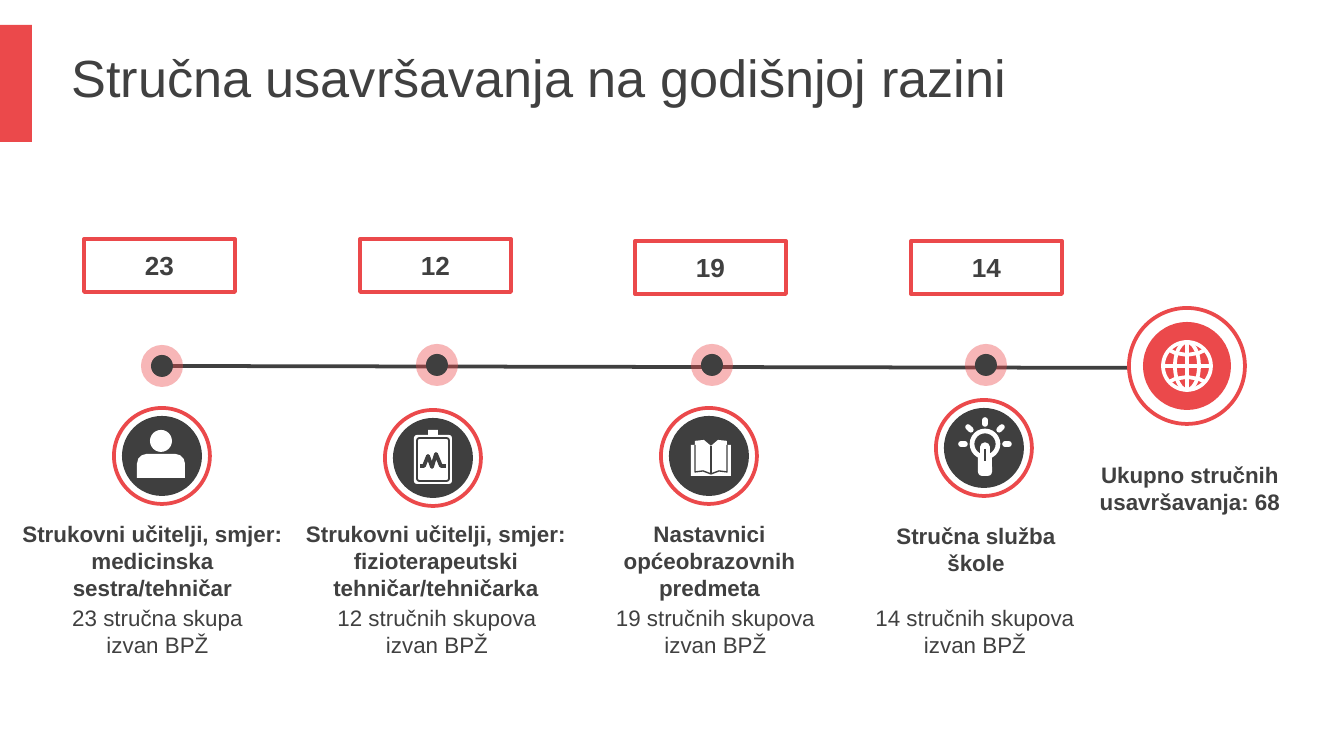
import math

from lxml import etree
from pptx import Presentation
from pptx.dml.color import RGBColor
from pptx.enum import shapes, text
from pptx.oxml.ns import qn
from pptx.util import Emu, Pt

PX = 914400 / 134.4
RED, DARK, INK, WHITE = "EB494B", "3F3F3F", "404040", "FFFFFF"
KIND = shapes.MSO_SHAPE

TITLE = "Stručna usavršavanja na godišnjoj razini"
TOTAL = "Ukupno stručnih usavršavanja: 68"
# count, heading, detail; left and top of the count; centres of dot and badge;
# left, top, width, height of heading; left and width of detail
STAGES = [
    ("23", "Strukovni učitelji, smjer: medicinska sestra/tehničar",
     "23 stručna skupa izvan BPŽ",
     (84, 239), (162, 366), (162, 456), (0, 513, 305, 95), (31, 253)),
    ("12", "Strukovni učitelji, smjer: fizioterapeutski tehničar/tehničarka",
     "12 stručnih skupova izvan BPŽ",
     (360, 239), (437, 365), (433, 458), (292, 513, 288, 95), (296, 282)),
    ("19", "Nastavnici općeobrazovnih predmeta",
     "19 stručnih skupova izvan BPŽ",
     (635, 241), (712, 365), (709, 456), (583, 513, 253, 95), (589, 253)),
    ("14", "Stručna služba škole",
     "14 stručnih skupova izvan BPŽ",
     (911, 241), (986, 365), (984, 448), (872, 516, 208, 67), (860, 230)),
]

deck = Presentation()
deck.slide_width, deck.slide_height = Emu(round(1344 * PX)), Emu(round(756 * PX))
page = deck.slides.add_slide(deck.slide_layouts[5])


def px(*lengths):
    return [Emu(round(length * PX)) for length in lengths]


def colour(code):
    return RGBColor.from_string(code)


def paint(shape, fill=None, line=None, weight=2):
    shape.shadow.inherit = False
    if fill:
        shape.fill.solid()
        shape.fill.fore_color.rgb = colour(fill)
    else:
        shape.fill.background()
    if line:
        shape.line.color.rgb = colour(line)
        shape.line.width = Pt(weight)
    else:
        shape.line.fill.background()
    return shape


def add_shape(kind, left, top, width, height, **look):
    return paint(page.shapes.add_shape(kind, *px(left, top, width, height)), **look)


def add_ellipse(x, y, across, down=None, **look):
    """Ellipse given by its centre and its half axes."""
    down = down or across
    return add_shape(KIND.OVAL, x - across, y - down, 2 * across, 2 * down, **look)


def add_line(x1, y1, x2, y2, line, weight=2, cap="flat"):
    connector = page.shapes.add_connector(
        shapes.MSO_CONNECTOR.STRAIGHT, *px(x1, y1, x2, y2))
    connector.line.color.rgb = colour(line)
    connector.line.width = Pt(weight)
    connector.line._get_or_add_ln().set("cap", cap)
    etree.SubElement(connector._element.spPr, qn("a:effectLst"))


def add_outline(x, y, points, close=False, **look):
    """Freeform whose points are offsets from x, y."""
    spots = [(x + dx, y + dy) for dx, dy in points]
    builder = page.shapes.build_freeform(*spots[0], scale=PX)
    builder.add_line_segments(spots[1:], close=close)
    return paint(builder.convert_to_shape(), **look)


def write(box, words, size, bold=False, align=text.PP_ALIGN.CENTER):
    frame = box.text_frame
    frame.text = words
    frame.word_wrap = True
    frame.auto_size = text.MSO_AUTO_SIZE.NONE
    frame.vertical_anchor = text.MSO_ANCHOR.MIDDLE
    para = frame.paragraphs[0]
    para.alignment = align
    font = para.runs[0].font
    font.name, font.size, font.bold = "Arial", Pt(size), bold
    font.color.rgb = colour(INK)


def add_text(words, left, top, width, height, bold=False):
    write(page.shapes.add_textbox(*px(left, top, width, height)), words, 12, bold)


def draw_person(x, y):
    add_ellipse(x - 1, y - 15, 11, fill=WHITE)
    body = add_shape(KIND.ROUND_2_SAME_RECTANGLE, x - 25, y - 2, 48, 24, fill=WHITE)
    body.adjustments[0] = 0.4


def draw_clipboard(x, y):
    add_shape(KIND.RECTANGLE, x - 5, y - 28, 10, 8, fill=WHITE)
    for margin, look in ((0, {"fill": WHITE}), (3, {"line": DARK, "weight": 1})):
        board = add_shape(KIND.ROUNDED_RECTANGLE, x - 19 + margin, y - 23 + margin,
                          38 - 2 * margin, 49 - 2 * margin, **look)
        board.adjustments[0] = 0.08
    pulse = [(-13, 8), (-9, 8), (-5, -2), (-1, 9), (3, -4), (8, 8), (13, 8)]
    add_outline(x, y, pulse, line=DARK)


def draw_book(x, y):
    half = [(2, -10), (9, -16), (18, -15), (18, -11), (22, -11), (22, 20)]
    cover = half + [(4 - dx, dy) for dx, dy in reversed(half)]
    add_outline(x, y, cover, close=True, fill=WHITE)
    pages = [(-14, -11), (-14, 16), (-6, 15), (2, 18), (10, 15), (18, 16), (18, -11)]
    add_outline(x, y, pages, line=DARK, weight=0.75)
    add_line(x + 2, y - 10, x + 2, y + 17, DARK, 0.75)


def draw_bulb(x, y):
    x, y = x + 1, y - 4
    add_ellipse(x, y, 13, line=WHITE, weight=2.5)
    base = add_shape(KIND.ROUNDED_RECTANGLE, x - 7, y + 10, 14, 22, fill=WHITE)
    base.adjustments[0] = 0.3
    add_line(x, y + 3, x, y + 12, WHITE, 5, "rnd")
    add_line(x, y + 5, x, y + 17, DARK, 1)
    for degrees in range(0, 181, 45):
        across, up = math.cos(math.radians(degrees)), math.sin(math.radians(degrees))
        add_line(x + 20 * across, y - 20 * up, x + 24 * across, y - 24 * up,
                 WHITE, 3, "rnd")


def draw_globe(x, y):
    for across in (24, 12):
        add_ellipse(x, y, across, 24, line=WHITE)
    add_line(x, y - 24, x, y + 24, WHITE)
    add_line(x - 24, y, x + 24, y, WHITE)
    for side in (-1, 1):
        parallel = [(dx, side * (11 + dx * dx / 60)) for dx in range(-18, 19, 6)]
        add_outline(x, y, parallel, line=WHITE)


add_shape(KIND.RECTANGLE, 0, 25, 32, 117, fill=RED)
title = page.shapes.title
title.left, title.top, title.width, title.height = px(58, 34, 1027, 85)
write(title, TITLE, 28, align=text.PP_ALIGN.LEFT)

add_line(152, 366, 1184, 368, INK)
add_ellipse(1187, 366, 58, fill=WHITE, line=RED)
add_ellipse(1187, 366, 44, fill=RED)
draw_globe(1187, 366)
add_text(TOTAL, 1086, 455, 208, 67, bold=True)

ICONS = [draw_person, draw_clipboard, draw_book, draw_bulb]
for stage, draw_icon in zip(STAGES, ICONS):
    count, heading, detail, corner, dot, badge, heading_area, (left, width) = stage
    write(add_shape(KIND.RECTANGLE, *corner, 151, 53, line=RED), count, 14, True)
    halo = add_ellipse(*dot, 21, fill=RED)
    tint = halo._element.spPr.find(".//" + qn("a:srgbClr"))
    etree.SubElement(tint, qn("a:alpha"), val="40000")
    add_ellipse(*dot, 11, fill=DARK)
    add_ellipse(*badge, 48, line=RED)
    add_ellipse(*badge, 40, fill=DARK)
    draw_icon(*badge)
    add_text(heading, *heading_area, bold=True)
    add_text(detail, left, 598, width, 67)

deck.save("out.pptx")
